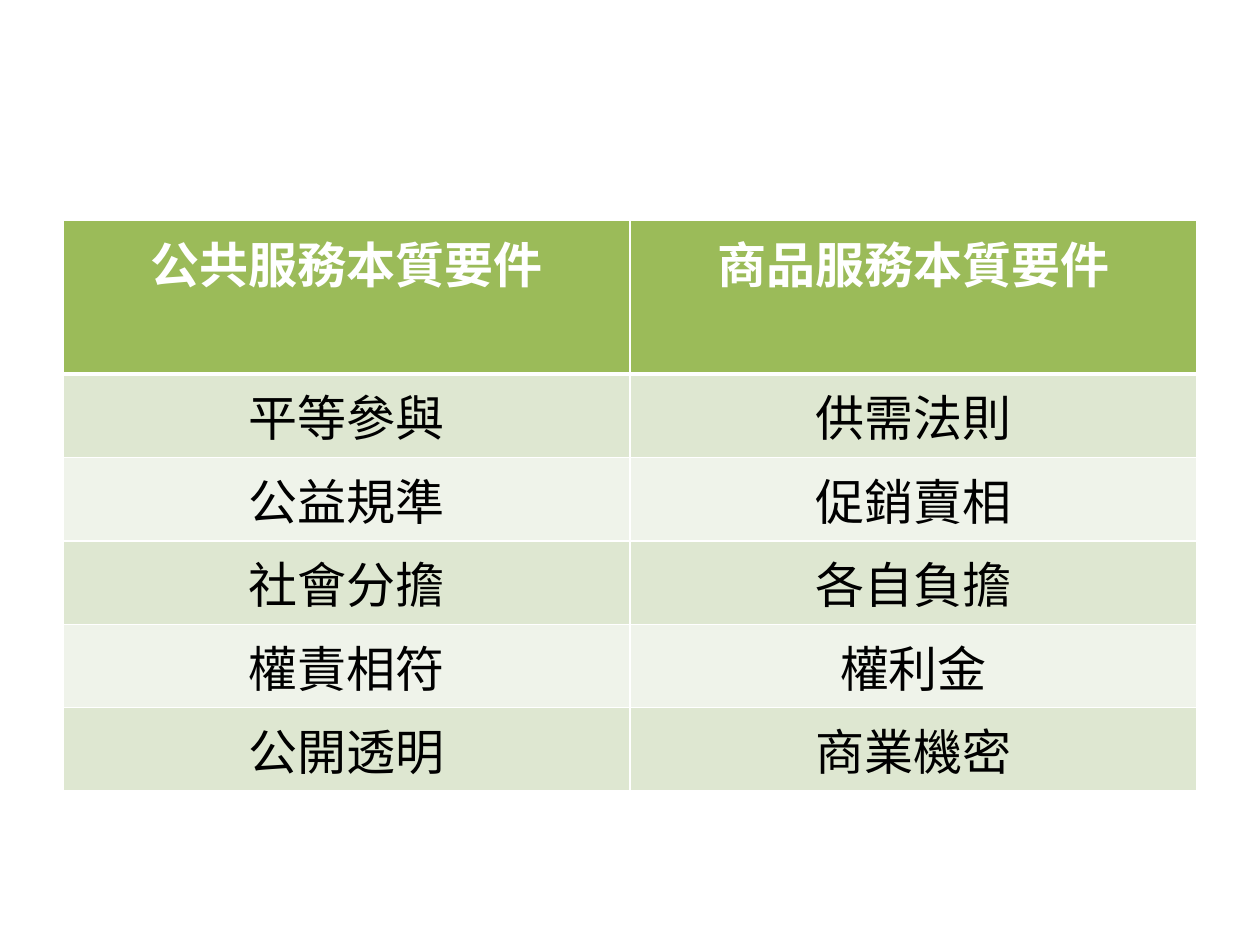
"""Build a slide with a table that compares public and commercial services."""
import dataclasses

import pptx
import pptx.dml.color
import pptx.enum.text
import pptx.oxml
import pptx.oxml.ns
import pptx.oxml.xmlchemy
import pptx.util

SCALE = 914400 // 126
FACE = "Noto Sans CJK SC"
WHITE = "FFFFFF"


@dataclasses.dataclass(frozen=True)
class Style:
    fill: str
    ink: str
    bold: bool
    top: int
    base: int


@dataclasses.dataclass(frozen=True)
class Row:
    left: str
    right: str
    high: int
    style: Style


HEAD = Style("9BBB59", WHITE, True, 1, 3)
FIRST = Style("DEE7D1", "000000", False, 3, 1)
DARK = dataclasses.replace(FIRST, top=1)
LIGHT = dataclasses.replace(DARK, fill="EFF3EA")

ROWS = [
    Row("公共服務本質要件", "商品服務本質要件", 154, HEAD),
    Row("平等參與", "供需法則", 83, FIRST),
    Row("公益規準", "促銷賣相", 83, LIGHT),
    Row("社會分擔", "各自負擔", 83, DARK),
    Row("權責相符", "權利金", 83, LIGHT),
    Row("公開透明", "商業機密", 83, DARK),
]


def px(count: int) -> int:
    return pptx.util.Emu(count * SCALE)


def color(code: str) -> pptx.dml.color.RGBColor:
    return pptx.dml.color.RGBColor.from_string(code)


def add_edge(cell, side: str, width: int) -> None:
    space = pptx.oxml.ns.nsdecls("a")
    edge = pptx.oxml.parse_xml(
        f'<a:ln{side} {space} w="{pptx.util.Pt(width)}"><a:solidFill>'
        f'<a:srgbClr val="{WHITE}"/></a:solidFill></a:ln{side}>'
    )
    cell._tc.get_or_add_tcPr().append(edge)


def set_font(para, style: Style) -> None:
    font = para.font
    font.name, font.size, font.bold = FACE, pptx.util.Pt(28), style.bold
    font.color.rgb = color(style.ink)
    east = pptx.oxml.parse_xml(
        f'<a:ea {pptx.oxml.ns.nsdecls("a")} typeface="{FACE}"/>'
    )
    font._element.find(pptx.oxml.ns.qn("a:latin")).addnext(east)


def fill_cell(cell, text: str, style: Style) -> None:
    for side, width in zip("LRTB", (1, 1, style.top, style.base)):
        add_edge(cell, side, width)
    cell.fill.solid()
    cell.fill.fore_color.rgb = color(style.fill)
    cell.text = text
    para = cell.text_frame.paragraphs[0]
    para.alignment = pptx.enum.text.PP_ALIGN.CENTER
    set_font(para, style)


def add_grid(slide, rows: list[Row]) -> None:
    high = sum(row.high for row in rows)
    frame = slide.shapes.add_table(
        len(rows), 2, px(63), px(220), px(1134), px(high)
    )
    grid = frame.table
    for line, row in enumerate(rows):
        grid.rows[line].height = px(row.high)
        for col, text in enumerate((row.left, row.right)):
            fill_cell(grid.cell(line, col), text, row.style)


def main() -> None:
    deck = pptx.Presentation()
    deck.slide_width, deck.slide_height = px(1260), px(945)
    slide = deck.slides.add_slide(deck.slide_layouts[6])
    add_grid(slide, ROWS)
    deck.save("out.pptx")


if __name__ == "__main__":
    main()
